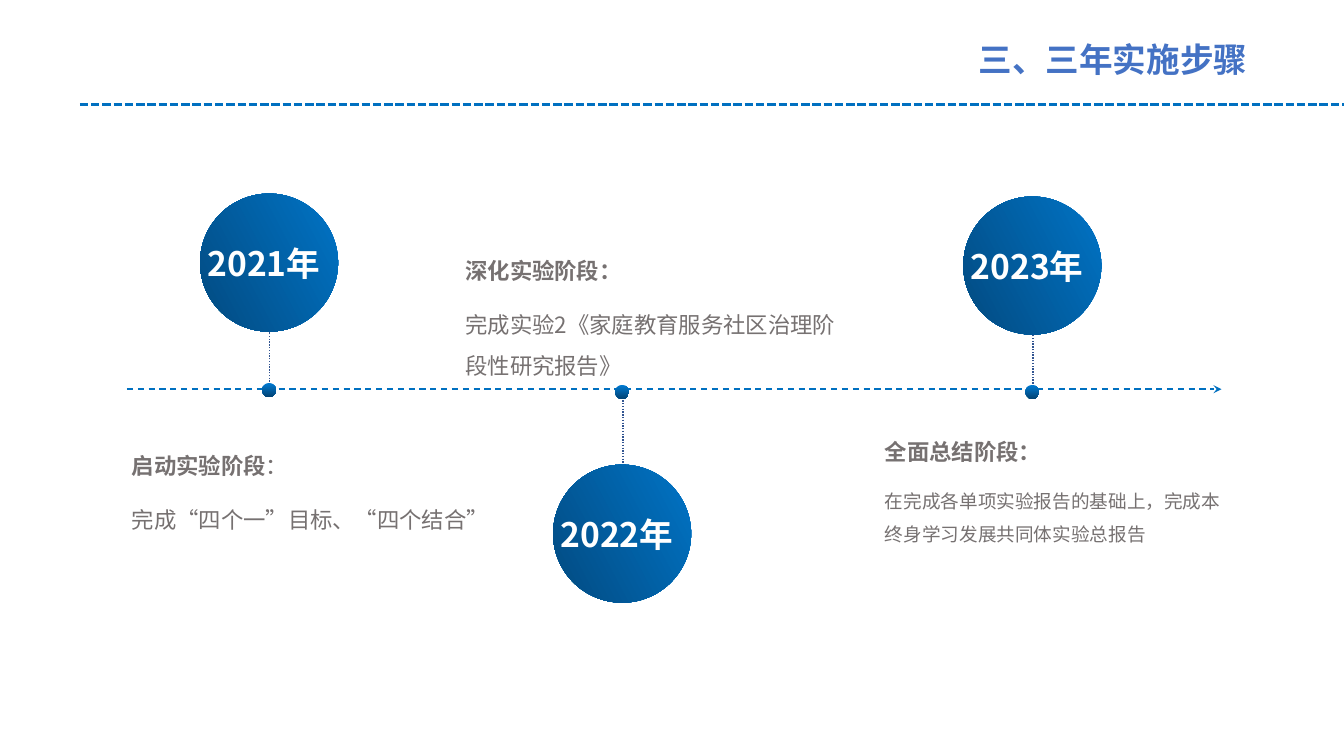
from pptx import Presentation
from pptx.dml.color import RGBColor
from pptx.enum.dml import MSO_LINE as DASH
from pptx.enum.shapes import MSO_CONNECTOR, MSO_SHAPE
from pptx.enum.text import MSO_AUTO_SIZE
from pptx.oxml.ns import qn
from pptx.util import Pt
from lxml import etree

# Content
FONT = "Noto Sans CJK SC"
BLUE, STEM, GREY, WHITE, TITLE_BLUE = "0070C0", "325491", "767171", "FFFFFF", "4472C4"
LIGHT, DARK = "007BD3", "034373"
SLIDE_W, SLIDE_H = 960, 540
TITLE = "三、三年实施步骤"

# year, centre x, circle centre y, dot centre y
MILESTONES = [
    ("2021年", 192.2, 187.6, 278.6),
    ("2023年", 737.4, 189.7, 280),
    ("2022年", 444.4, 381.2, 280),
]
# box (left, top, width, height), heading runs (text, bold), body, body size
STAGES = [
    ((325.4, 170.6, 290.9, 104.4), [("深化实验阶段：", True)],
     "完成实验2《家庭教育服务社区治理阶段性研究报告》", 16),
    ((87.1, 309.6, 290.9, 75.6), [("启动实验阶段", True), ("：", False)],
     "完成“四个一”目标、“四个结合”", 16),
    ((625, 299.5, 262.8, 95), [("全面总结阶段：", True)],
     "在完成各单项实验报告的基础上，完成本终身学习发展共同体实验总报告", 13.3),
]
CIRCLE, DOT, TURN = 98.6, 10, 62.3
LABEL_W, LABEL_H, LABEL_DX, LABEL_DY = 103, 36, 51.1, 17.6


def rgb(value):
    return RGBColor.from_string(value)


def add_line(x1, y1, x2, y2, color, width, dash):
    c = s.shapes.add_connector(MSO_CONNECTOR.STRAIGHT, Pt(x1), Pt(y1), Pt(x2), Pt(y2))
    c.line.color.rgb = rgb(color)
    c.line.width = Pt(width)
    c.line.dash_style = dash
    etree.SubElement(c._element.spPr, qn("a:effectLst"))
    return c


def add_disc(cx, cy, size, turn=0):
    sp = s.shapes.add_shape(MSO_SHAPE.OVAL, Pt(cx - size / 2), Pt(cy - size / 2),
                            Pt(size), Pt(size))
    sp.shadow.inherit = False
    sp.line.fill.background()
    sp.fill.gradient()
    sp.fill.gradient_angle = 270
    for stop, color, position in zip(sp.fill.gradient_stops, (LIGHT, DARK), (0, 1)):
        stop.color.rgb = rgb(color)
        stop.position = position
    sp.rotation = turn


def add_box(x, y, w, h, wrap=True):
    tf = s.shapes.add_textbox(Pt(x), Pt(y), Pt(w), Pt(h)).text_frame
    tf.word_wrap = wrap
    tf.auto_size = MSO_AUTO_SIZE.SHAPE_TO_FIT_TEXT
    return tf


def write(p, runs, size, color, bold):
    p.font.size = Pt(size)
    p.font.bold = bold
    p.font.color.rgb = rgb(color)
    p.font.name = FONT
    defaults = p._p.pPr.find(qn("a:defRPr"))
    etree.SubElement(defaults, qn("a:ea")).set("typeface", FONT)
    for text, run_bold in runs:
        r = p.add_run()
        r.text = text
        if run_bold != bold:
            r.font.bold = run_bold


prs = Presentation()
prs.slide_width, prs.slide_height = Pt(SLIDE_W), Pt(SLIDE_H)
s = prs.slides.add_slide(prs.slide_layouts[6])

# Header rule and timeline arrow
add_line(57, 74.7, SLIDE_W, 74.7, BLUE, 2, DASH.SQUARE_DOT)
timeline = add_line(90.7, 278, 872.6, 278, BLUE, 1.1, DASH.DASH)
etree.SubElement(timeline.line._get_or_add_ln(), qn("a:tailEnd")).set("type", "stealth")

# Stage descriptions
for box, heading, body, body_size in STAGES:
    tf = add_box(*box)
    write(tf.paragraphs[0], heading, 16, GREY, True)
    p = tf.add_paragraph()
    p.space_before = Pt(10)
    write(p, [(body, False)], body_size, GREY, False)
    for p in tf.paragraphs:
        p.line_spacing = 1.5

# Milestones: stem, dot, circle and year
for year, cx, circle_y, dot_y in MILESTONES:
    side = 1 if circle_y < dot_y else -1
    add_line(cx + 0.5, dot_y, cx + 0.5, circle_y + side * CIRCLE / 2, STEM, 1, DASH.ROUND_DOT)
    add_disc(cx, dot_y, DOT)
    add_disc(cx, circle_y, CIRCLE, TURN)
    tf = add_box(cx - LABEL_DX, circle_y - LABEL_DY, LABEL_W, LABEL_H)
    write(tf.paragraphs[0], [(year, True)], 24, WHITE, True)

# Title
tf = add_box(691.9, 24.5, 207.4, 65.5, wrap=False)
write(tf.paragraphs[0], [(TITLE, True)], 24, TITLE_BLUE, True)

prs.save("out.pptx")
